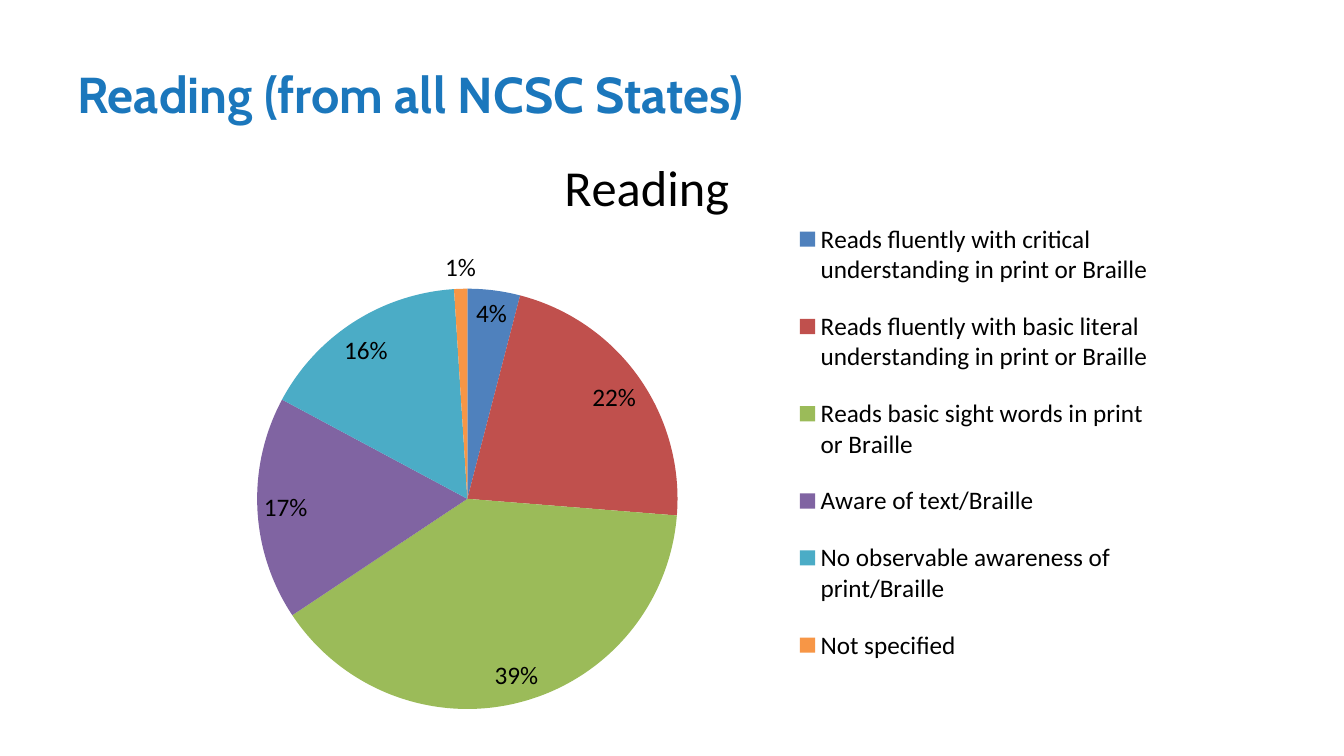
import pptx
import pptx.chart.data
import pptx.dml.color
import pptx.enum.chart
import pptx.enum.text
import pptx.oxml
import pptx.oxml.ns
import pptx.util
from dataclasses import dataclass

Inches = pptx.util.Inches
RGBColor = pptx.dml.color.RGBColor


@dataclass(frozen=True)
class Theme:
    title_font: str = "Cabin"
    chart_font: str = "Calibri"
    title_color: str = "1B77BC"
    text_color: str = "000000"
    slices: tuple = ("4F81BD", "C0504D", "9BBB59", "8064A2", "4BACC6", "F79646")
    title_size: int = 36
    chart_size: int = 18


THEME = Theme()

READING_LEVELS = {
    "Reads fluently with critical understanding in print or Braille": 4,
    "Reads fluently with basic literal understanding in print or Braille": 22,
    "Reads basic sight words in print or Braille": 39,
    "Aware of text/Braille": 17,
    "No observable awareness of print/Braille": 16,
    "Not specified": 1,
}


def format_font(font, name, size, color, bold):
    values = {"name": name, "size": pptx.util.Pt(size), "bold": bold}
    for attribute, value in values.items():
        setattr(font, attribute, value)
    font.color.rgb = RGBColor.from_string(color)


def set_layout(element, left, top, width, height, inner=False):
    """Place a chart part by fractions of the chart area."""
    parts = {"xMode": "edge", "yMode": "edge",
             "x": left, "y": top, "w": width, "h": height}
    if inner:
        parts = {"layoutTarget": "inner", **parts}
    children = "".join(f'<c:{tag} val="{value}"/>' for tag, value in parts.items())
    layout = pptx.oxml.parse_xml(
        f'<c:layout {pptx.oxml.ns.nsdecls("c")}>'
        f"<c:manualLayout>{children}</c:manualLayout></c:layout>")
    for existing in element.findall(pptx.oxml.ns.qn("c:layout")):
        element.remove(existing)
    position = element.find(pptx.oxml.ns.qn("c:legendPos"))
    if position is None:
        element.insert(0, layout)
    else:
        position.addnext(layout)


def add_title(slide, box, text):
    shape = slide.shapes.add_textbox(*box)
    frame = shape.text_frame
    frame.word_wrap = True
    frame.vertical_anchor = pptx.enum.text.MSO_ANCHOR.MIDDLE
    run = frame.paragraphs[0].add_run()
    run.text = text
    format_font(run.font, THEME.title_font, THEME.title_size, THEME.title_color, True)


def add_reading_chart(slide, box):
    data = pptx.chart.data.CategoryChartData()
    data.categories = list(READING_LEVELS)
    data.add_series("Reading", list(READING_LEVELS.values()))
    chart = slide.shapes.add_chart(
        pptx.enum.chart.XL_CHART_TYPE.PIE, *box, data).chart
    format_font(chart.font, THEME.chart_font, THEME.chart_size, THEME.text_color, False)

    # Chart title
    chart.has_title = True
    run = chart.chart_title.text_frame.paragraphs[0].add_run()
    run.text = "Reading"
    format_font(run.font, THEME.chart_font, THEME.title_size, THEME.text_color, False)

    # Legend
    chart.has_legend = True
    chart.legend.position = pptx.enum.chart.XL_LEGEND_POSITION.RIGHT
    chart.legend.include_in_layout = False
    set_layout(chart.legend._element, 0.65, 0.12, 0.35, 0.82)

    # Slices and percentages
    plot = chart.plots[0]
    plot.vary_by_categories = True
    for index, color in enumerate(THEME.slices):
        fill = plot.series[0].points[index].format.fill
        fill.solid()
        fill.fore_color.rgb = RGBColor.from_string(color)
    plot.has_data_labels = True
    label_values = {
        "show_percentage": True,
        "show_value": False,
        "number_format": "0%",
        "number_format_is_linked": False,
        "position": pptx.enum.chart.XL_LABEL_POSITION.BEST_FIT,
    }
    for attribute, value in label_values.items():
        setattr(plot.data_labels, attribute, value)
    plot_area = chart._chartSpace.chart.plotArea
    set_layout(plot_area, 0.12, 0.27, 0.41, 0.71, inner=True)


def main():
    presentation = pptx.Presentation()
    presentation.slide_width = Inches(13.33)
    presentation.slide_height = Inches(7.5)
    slide = presentation.slides.add_slide(presentation.slide_layouts[6])
    add_title(slide, [Inches(n) for n in (0.67, 0.3, 12, 1.25)],
              "Reading (from all NCSC States)")
    add_reading_chart(slide, [Inches(n) for n in (1.33, 1.25, 10.17, 5.92)])
    presentation.save("out.pptx")


if __name__ == "__main__":
    main()
